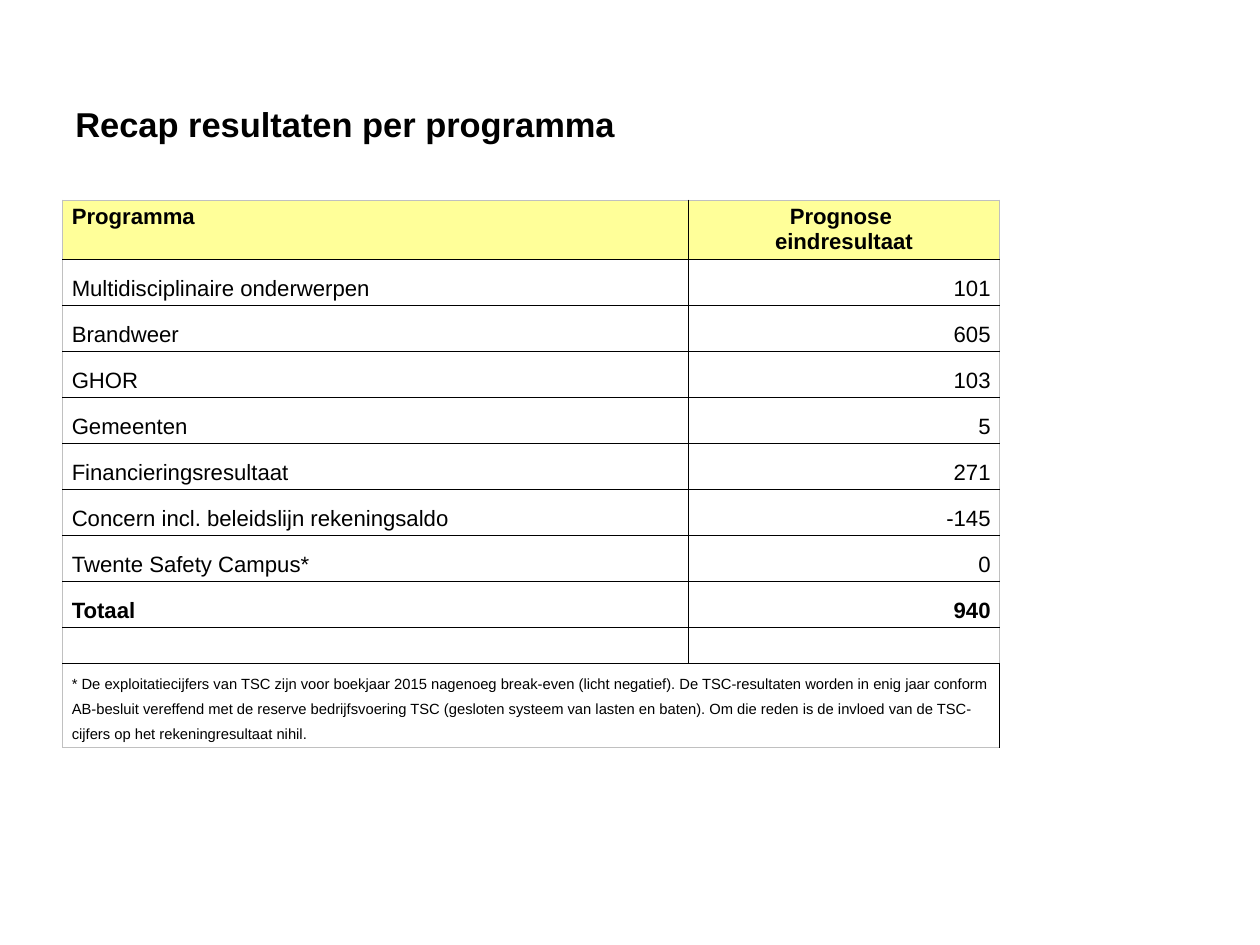
from lxml import etree
from pptx import Presentation
from pptx import util as u
from pptx.dml import color
from pptx.enum import text
from pptx.oxml import ns

HEADINGS = (["Programma"], ["Prognose ", "eindresultaat"])
RESULTS = [
    ("Multidisciplinaire onderwerpen", "101"),
    ("Brandweer", "605"),
    ("GHOR", "103"),
    ("Gemeenten", "5"),
    ("Financieringsresultaat", "271"),
    ("Concern incl. beleidslijn rekeningsaldo", "-145"),
    ("Twente Safety Campus*", "0"),
    ("Totaal", "940"),
]
FOOTNOTE = (
    "* De exploitatiecijfers van TSC zijn voor boekjaar 2015 nagenoeg break-even "
    "(licht negatief). De TSC-resultaten worden in enig jaar conform AB-besluit "
    "vereffend met de reserve bedrijfsvoering TSC (gesloten systeem van lasten en "
    "baten). Om die reden is de invloed van de TSC-cijfers op het "
    "rekeningresultaat nihil."
)
LEFT, CENTER, RIGHT = text.PP_ALIGN.LEFT, text.PP_ALIGN.CENTER, text.PP_ALIGN.RIGHT


def rgb(value):
    return color.RGBColor.from_string(value)


class Page:
    font = "Arial"
    ink = "000000"
    edge = "C0C0C0"
    header_fill = "FFFF99"

    def __init__(self, deck):
        self.slide = deck.slides.add_slide(deck.slide_layouts[5])

    def set_text(self, frame, lines, size, bold=False, align=LEFT, spacing=1.0):
        for index, line in enumerate(lines):
            paragraph = frame.add_paragraph() if index else frame.paragraphs[0]
            paragraph.text = line
            paragraph.alignment = align
            paragraph.line_spacing = spacing
            paragraph.font.name = self.font
            paragraph.font.size = u.Pt(size)
            paragraph.font.bold = bold
            paragraph.font.color.rgb = rgb(self.ink)

    def title(self, heading, left, top, width, height):
        title = self.slide.shapes.title
        title.left, title.top = u.Inches(left), u.Inches(top)
        title.width, title.height = u.Inches(width), u.Inches(height)
        frame = title.text_frame
        frame.margin_left = frame.margin_right = u.Inches(0.14)
        frame.margin_top = frame.margin_bottom = u.Inches(0.07)
        frame.vertical_anchor = text.MSO_ANCHOR.MIDDLE
        self.set_text(frame, [heading], 28, bold=True)

    def table(self, left, top, widths, heights):
        table = self.slide.shapes.add_table(
            len(heights), len(widths), u.Inches(left), u.Inches(top),
            u.Inches(sum(widths)), u.Inches(sum(heights))).table
        table.first_row = table.horz_banding = False
        for column, width in zip(table.columns, widths):
            column.width = u.Inches(width)
        for row, height in zip(table.rows, heights):
            row.height = u.Inches(height)
        last_row, last_column = len(heights) - 1, len(widths) - 1
        for r in range(len(heights)):
            for c in range(len(widths)):
                cell = table.cell(r, c)
                if r == 0:
                    cell.fill.solid()
                    cell.fill.fore_color.rgb = rgb(self.header_fill)
                else:
                    cell.fill.background()
                self.borders(cell, {"lnL": c == 0, "lnR": c == last_column,
                                    "lnT": r == 0, "lnB": r == last_row})
        return table

    def borders(self, cell, outer_sides):
        properties = cell._tc.get_or_add_tcPr()
        for position, (side, outer) in enumerate(outer_sides.items()):
            line = etree.Element(ns.qn("a:" + side), w=str(u.Pt(1)))
            fill = etree.SubElement(line, ns.qn("a:solidFill"))
            etree.SubElement(fill, ns.qn("a:srgbClr"),
                             val=self.edge if outer else self.ink)
            properties.insert(position, line)


def main():
    deck = Presentation()
    deck.slide_width, deck.slide_height = u.Inches(14.22), u.Inches(10.67)
    page = Page(deck)
    page.title("Recap resultaten per programma", 0.71, 1, 12.8, 0.79)

    heights = [0.67] + [0.52] * len(RESULTS) + [0.38, 0.94]
    table = page.table(0.71, 2.26, [7.06, 3.51], heights)
    for column, (lines, align) in enumerate(zip(HEADINGS, (LEFT, CENTER))):
        page.set_text(table.cell(0, column).text_frame, lines, 18, True, align)
    for row, result in enumerate(RESULTS, 1):
        for column, (entry, align) in enumerate(zip(result, (LEFT, RIGHT))):
            page.set_text(table.cell(row, column).text_frame, [entry], 18,
                          result[0] == "Totaal", align, 1.5)
    last = len(heights) - 1
    note = table.cell(last, 0)
    note.merge(table.cell(last, 1))
    page.set_text(note.text_frame, [FOOTNOTE], 12, spacing=1.5)
    deck.save("out.pptx")


if __name__ == "__main__":
    main()
